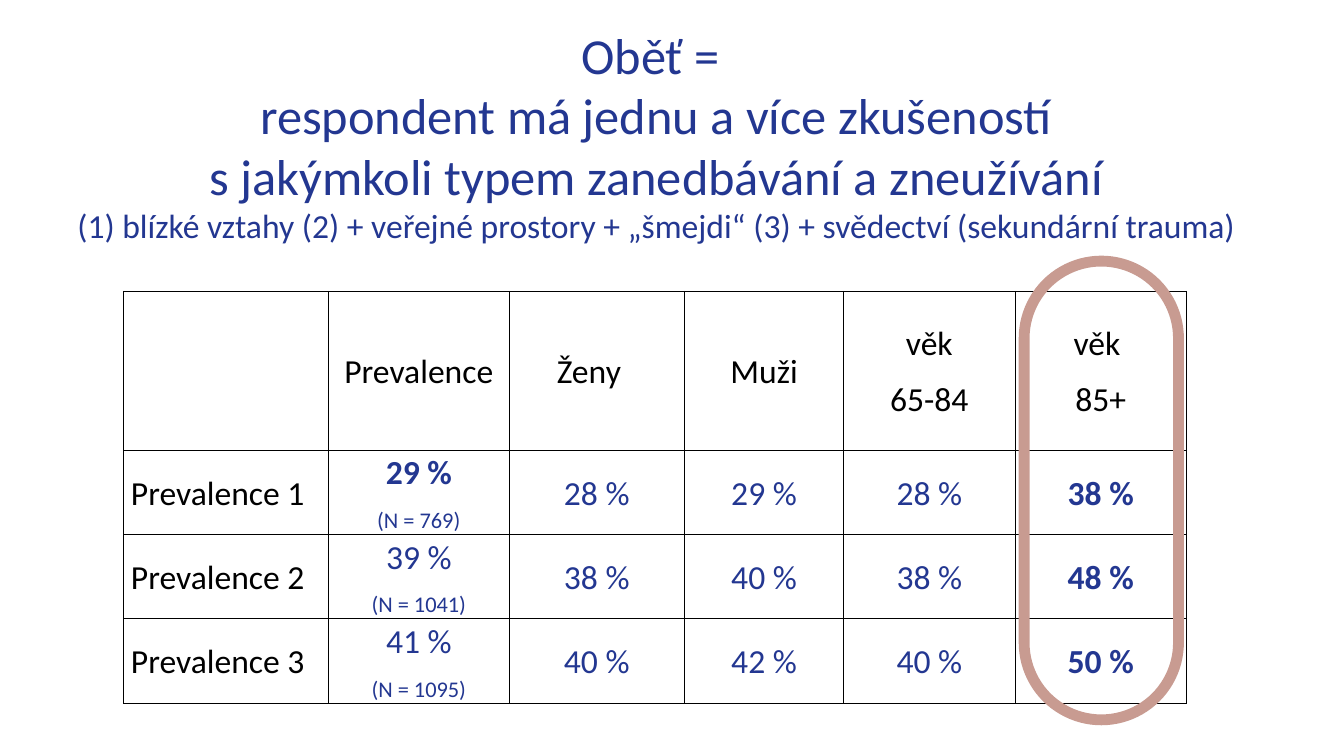
import pptx
import pptx.dml.color
import pptx.enum.shapes
import pptx.enum.text
import pptx.oxml
import pptx.oxml.ns
import pptx.util
from pptx.util import Cm

FONT = "Calibri"
BLUE, BLACK, ROSE = "233791", "000000", "C89B91"

TITLE_LINES = [
    "Oběť = ",
    "respondent má jednu a více zkušeností",
    " s jakýmkoli typem zanedbávání a zneužívání ",
]
SUBTITLE = "(1) blízké vztahy (2) + veřejné prostory + „šmejdi“ (3) + svědectví (sekundární trauma)"

# Each cell is a list of paragraphs.
HEADERS = [[], ["Prevalence"], ["Ženy"], ["Muži"], ["věk", "65-84"], ["věk ", "85+"]]
ROWS = [
    [["Prevalence 1"], ["29 %", "(N = 769)"], ["28 %"], ["29 %"], ["28 %"], ["38 %"]],
    [["Prevalence 2"], ["39 %", "(N = 1041)"], ["38 %"], ["40 %"], ["38 %"], ["48 %"]],
    [["Prevalence 3"], ["41 %", "(N = 1095)"], ["40 %"], ["42 %"], ["40 %"], ["50 %"]],
]
BOLD_CELLS = {(1, 1), (1, 5), (2, 5), (3, 5)}

COLUMN_WIDTHS = [5.16, 4.55, 4.42, 4.01, 4.32, 4.32]
ROW_HEIGHTS = [4.0, 1.96, 1.96, 1.96]
TABLE_LEFT, TABLE_TOP = 3.12, 7.34


def color(hex_string):
    return pptx.dml.color.RGBColor.from_string(hex_string)


def add_text(paragraph, text, size=24, hex_color=BLUE, bold=False):
    run = paragraph.add_run()
    run.text = text
    run.font.name = FONT
    run.font.size = pptx.util.Pt(size)
    run.font.bold = bold
    run.font.color.rgb = color(hex_color)


def add_borders(cell, hex_color=BLACK, width=0.5):
    properties = cell._tc.get_or_add_tcPr()
    for position, side in enumerate(("lnL", "lnR", "lnT", "lnB")):
        line = pptx.oxml.parse_xml(
            f'<a:{side} {pptx.oxml.ns.nsdecls("a")} w="{pptx.util.Pt(width)}">'
            f'<a:solidFill><a:srgbClr val="{hex_color}"/></a:solidFill></a:{side}>'
        )
        properties.insert(position, line)


def add_title(slide):
    title = slide.shapes.title
    title.left, title.top, title.width, title.height = Cm(1.4), Cm(1.55), Cm(30.28), Cm(3.68)
    frame = title.text_frame
    frame.word_wrap = True
    frame.auto_size = pptx.enum.text.MSO_AUTO_SIZE.NONE
    frame.vertical_anchor = pptx.enum.text.MSO_ANCHOR.MIDDLE
    paragraph = frame.paragraphs[0]
    paragraph.alignment = pptx.enum.text.PP_ALIGN.CENTER
    for line in TITLE_LINES:
        add_text(paragraph, line, size=36)
        paragraph.add_line_break()
    add_text(paragraph, SUBTITLE)


def fill_cell(cell, lines, row, column):
    cell.fill.background()
    add_borders(cell)
    cell.vertical_anchor = pptx.enum.text.MSO_ANCHOR.MIDDLE
    cell.margin_left = cell.margin_right = Cm(0.18)
    cell.margin_top = cell.margin_bottom = 0
    is_label = row == 0 or column == 0
    for index, line in enumerate(lines):
        frame = cell.text_frame
        paragraph = frame.add_paragraph() if index else frame.paragraphs[0]
        if column:
            paragraph.alignment = pptx.enum.text.PP_ALIGN.CENTER
        paragraph.line_spacing = 1.07
        paragraph.space_after = pptx.util.Pt(8)
        is_count = line.startswith("(N")
        add_text(
            paragraph,
            line,
            size=16 if is_count else 24,
            hex_color=BLACK if is_label else BLUE,
            bold=(row, column) in BOLD_CELLS and not is_count,
        )


def add_prevalence_table(slide):
    frame = slide.shapes.add_table(
        len(ROW_HEIGHTS), len(COLUMN_WIDTHS), Cm(TABLE_LEFT), Cm(TABLE_TOP),
        Cm(sum(COLUMN_WIDTHS)), Cm(sum(ROW_HEIGHTS)),
    )
    table = frame.table
    table.first_row = table.horz_banding = False
    for column, width in enumerate(COLUMN_WIDTHS):
        table.columns[column].width = Cm(width)
    for row, cells in enumerate([HEADERS] + ROWS):
        table.rows[row].height = Cm(ROW_HEIGHTS[row])
        for column, lines in enumerate(cells):
            fill_cell(table.cell(row, column), lines, row, column)
    table.cell(0, 2).margin_right = Cm(0.58)


def add_highlight(slide):
    ring = slide.shapes.add_shape(
        pptx.enum.shapes.MSO_SHAPE.ROUNDED_RECTANGLE, Cm(25.81), Cm(6.58), Cm(3.89), Cm(11.56)
    )
    ring.adjustments[0] = 0.5
    ring.shadow.inherit = False
    ring.fill.background()
    ring.line.color.rgb = color(ROSE)
    ring.line.width = pptx.util.Pt(7.75)


def main():
    presentation = pptx.Presentation()
    presentation.slide_width, presentation.slide_height = Cm(33.87), Cm(19.05)
    slide = presentation.slides.add_slide(presentation.slide_layouts[5])
    add_title(slide)
    add_prevalence_table(slide)
    add_highlight(slide)
    presentation.save("out.pptx")


if __name__ == "__main__":
    main()
